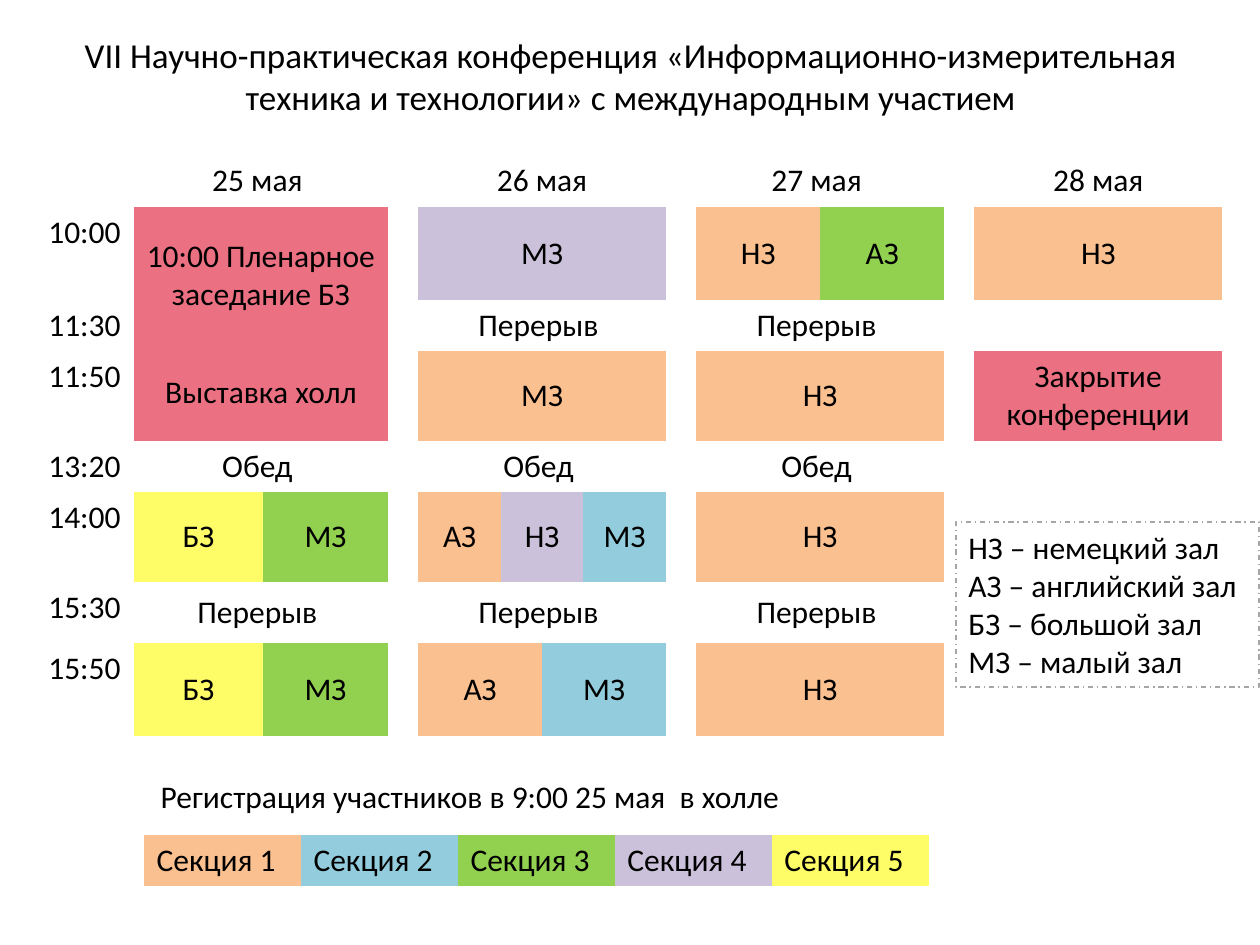
from itertools import product

from pptx import Presentation
from pptx.dml.color import RGBColor as RGB
from pptx.enum.dml import MSO_LINE
from pptx.enum.shapes import MSO_SHAPE as SHAPE
from pptx.enum.text import MSO_ANCHOR as ANCHOR, PP_ALIGN as ALIGN
from pptx.oxml.ns import qn
from pptx.util import Emu, Pt

FONT = "Calibri"
PLAIN = "{2D5ABB26-0587-4C30-8999-92F81FD0307C}"  # no style, no grid
COLORS = {
    "text": "000000", "edge": "A6A6A6", "main": "EB7182",
    "s1": "FAC090", "s2": "93CDDD", "s3": "92D050",
    "s4": "CCC1DA", "s5": "FFFD67",
}
TITLE = ("VII Научно-практическая конференция «Информационно-измерительная "
         "техника и технологии» с международным участием")
HALLS = ("НЗ – немецкий зал\nАЗ – английский зал\n"
         "БЗ – большой зал\nМЗ – малый зал")

COLS = [99, 129, 125, 30, 83, 41, 41, 83, 30, 124, 124, 30, 248]
ROWS = [53, 93, 45, 6, 90, 51, 90, 61, 93]
DAYS = [(1, 2), (4, 4), (9, 2), (12, 1)]  # first column, column count
GAPS = [3, 8, 11]
TIMES = {1: "10:00", 2: "11:30", 4: "11:50", 5: "13:20",
         6: "14:00", 7: "15:30", 8: "15:50"}
# row, column, row count, column count, text, colour
EVENTS = [
    (1, 1, 2, 2, "10:00 Пленарное заседание БЗ", "main"),
    (3, 1, 2, 2, "Выставка холл", "main"),
    (1, 4, 1, 4, "МЗ", "s4"),
    (1, 9, 1, 1, "НЗ", "s1"),
    (1, 10, 1, 1, "АЗ", "s3"),
    (1, 12, 1, 1, "НЗ", "s1"),
    (4, 4, 1, 4, "МЗ", "s1"),
    (4, 9, 1, 2, "НЗ", "s1"),
    (4, 12, 1, 1, "Закрытие конференции", "main"),
    (6, 1, 1, 1, "БЗ", "s5"),
    (6, 2, 1, 1, "МЗ", "s3"),
    (6, 4, 1, 1, "АЗ", "s1"),
    (6, 5, 1, 2, "НЗ", "s4"),
    (6, 7, 1, 1, "МЗ", "s2"),
    (6, 9, 1, 2, "НЗ", "s1"),
    (8, 1, 1, 1, "БЗ", "s5"),
    (8, 2, 1, 1, "МЗ", "s3"),
    (8, 4, 1, 2, "АЗ", "s1"),
    (8, 6, 1, 2, "МЗ", "s2"),
    (8, 9, 1, 2, "НЗ", "s1"),
]


def px(n):
    return Emu(round(n * 914400 / 126))


def color(name):
    return RGB.from_string(COLORS[name])


def write(frame, text, size=18, align=ALIGN.CENTER):
    frame.text = text
    for par in frame.paragraphs:
        par.alignment = align
        for run in par.runs:
            run.font.name = FONT
            run.font.size = Pt(size)
            run.font.color.rgb = color("text")


def add_text(slide, box, text, size=18, wrap=True):
    frame = slide.shapes.add_textbox(*map(px, box)).text_frame
    frame.word_wrap = wrap
    frame.vertical_anchor = ANCHOR.MIDDLE
    write(frame, text, size)


def add_grid(slide, left, top, cols, rows):
    """Add an unstyled table with the given column and row sizes."""
    holder = slide.shapes.add_table(
        len(rows), len(cols), px(left), px(top), px(sum(cols)), px(sum(rows)))
    holder.element.find(".//" + qn("a:tableStyleId")).text = PLAIN
    grid = holder.table
    grid.first_row = grid.horz_banding = False
    for col, width in zip(grid.columns, cols):
        col.width = px(width)
    for row, height in zip(grid.rows, rows):
        row.height = px(height)
    for r, c in product(range(len(rows)), range(len(cols))):
        grid.cell(r, c).fill.background()
    return grid


def fill_cell(grid, row, col, text, tone=None, down=1, across=1,
              align=ALIGN.CENTER, anchor=ANCHOR.MIDDLE):
    cell = grid.cell(row, col)
    if down * across > 1:
        cell.merge(grid.cell(row + down - 1, col + across - 1))
    cell.vertical_anchor = anchor
    if tone:
        cell.fill.solid()
        cell.fill.fore_color.rgb = color(tone)
    if text:
        write(cell.text_frame, text, align=align)


def add_plan(slide):
    grid = add_grid(slide, 35, 154, COLS, ROWS)
    for row, time in TIMES.items():
        fill_cell(grid, row, 0, time, down=2 if row == 2 else 1,
                  anchor=ANCHOR.TOP)
    dates = ["25 мая ", "26 мая", "27 мая ", "28 мая"]
    for (col, across), date in zip(DAYS, dates):
        fill_cell(grid, 0, col, date, across=across)
    for col, across in DAYS[:3]:
        fill_cell(grid, 5, col, "Обед ", across=across)
        fill_cell(grid, 7, col, "Перерыв ", across=across)
    for col, across in DAYS[1:3]:
        fill_cell(grid, 2, col, "Перерыв ", down=2, across=across)
    for col in GAPS + [12]:
        fill_cell(grid, 2, col, "", down=2)
    for row, col, down, across, text, tone in EVENTS:
        fill_cell(grid, row, col, text, tone, down, across)


def add_key(slide):
    grid = add_grid(slide, 144, 835, [157] * 5, [51])
    for i in range(5):
        fill_cell(grid, 0, i, f"Секция {i + 1}", f"s{i + 1}",
                  align=ALIGN.LEFT, anchor=ANCHOR.TOP)


def add_halls(slide):
    box = slide.shapes.add_shape(
        SHAPE.RECTANGLE, *map(px, (956, 522, 303, 165)))
    box.shadow.inherit = False
    box.fill.background()
    box.line.color.rgb = color("edge")
    box.line.width = Pt(0.75)
    box.line.dash_style = MSO_LINE.DASH_DOT
    box.text_frame.word_wrap = True
    box.text_frame.vertical_anchor = ANCHOR.TOP
    write(box.text_frame, HALLS, align=ALIGN.LEFT)


def main():
    prs = Presentation()
    prs.slide_width, prs.slide_height = px(1260), px(945)
    slide = prs.slides.add_slide(prs.slide_layouts[6])
    add_text(slide, (64, 27, 1134, 97), TITLE, 20)
    add_plan(slide)
    add_key(slide)
    add_halls(slide)
    add_text(slide, (144, 770, 659, 51),
             "Регистрация участников в 9:00 25 мая  в холле ", wrap=False)
    prs.save("out.pptx")


if __name__ == "__main__":
    main()
